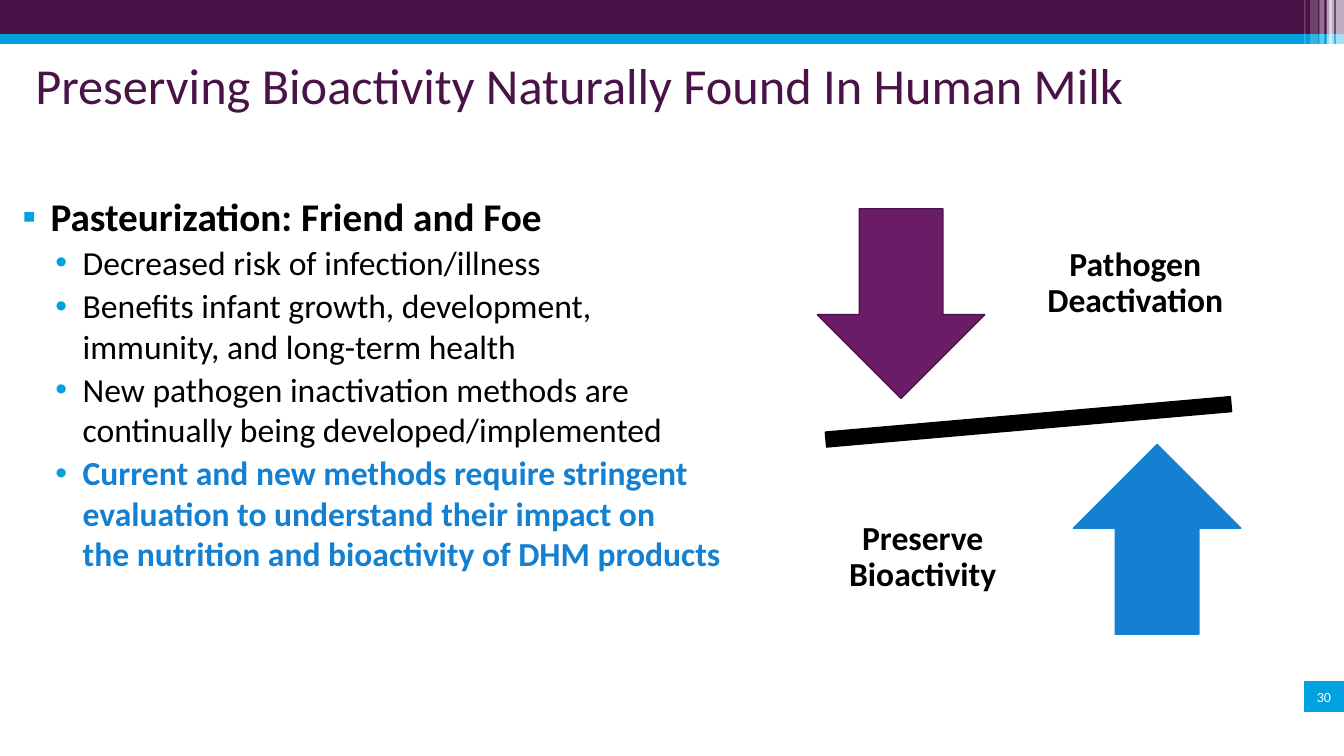
from lxml import etree
from pptx import Presentation
from pptx.dml.color import RGBColor
from pptx.enum.shapes import MSO_SHAPE
from pptx.enum.text import MSO_ANCHOR, MSO_AUTO_SIZE, PP_ALIGN
from pptx.oxml.ns import qn
from pptx.util import Cm, Pt

RECTANGLE, MINUS = MSO_SHAPE.RECTANGLE, MSO_SHAPE.MATH_MINUS
DOWN_ARROW, UP_ARROW = MSO_SHAPE.DOWN_ARROW, MSO_SHAPE.UP_ARROW
TOP, MIDDLE = MSO_ANCHOR.TOP, MSO_ANCHOR.MIDDLE
LEFT, CENTER, RIGHT = PP_ALIGN.LEFT, PP_ALIGN.CENTER, PP_ALIGN.RIGHT
NO_AUTOFIT = MSO_AUTO_SIZE.NONE

PLUM = RGBColor(0x49, 0x13, 0x47)
PURPLE = RGBColor(0x6A, 0x1C, 0x67)
CYAN = RGBColor(0x00, 0xA1, 0xDF)
BLUE = RGBColor(0x14, 0x80, 0xD1)
BLACK = RGBColor(0x00, 0x00, 0x00)
WHITE = RGBColor(0xFF, 0xFF, 0xFF)
FONT = "Calibri"

presentation = Presentation()
presentation.slide_width, presentation.slide_height = Cm(33.87), Cm(19.05)
slide = presentation.slides.add_slide(presentation.slide_layouts[1])


def add_filled_shape(kind, left, top, width, height, fill, line=None):
    shape = slide.shapes.add_shape(kind, Cm(left), Cm(top), Cm(width), Cm(height))
    shape.shadow.inherit = False
    shape.fill.solid()
    shape.fill.fore_color.rgb = fill
    if line is None:
        shape.line.fill.background()
    else:
        shape.line.color.rgb = line
        shape.line.width = Pt(1)
    return shape


def add_styled_run(paragraph, text, size, color, bold=False):
    run = paragraph.add_run()
    run.text = text
    run.font.name = FONT
    run.font.size = Pt(size)
    run.font.bold = bold
    run.font.color.rgb = color


# Header bands
add_filled_shape(RECTANGLE, 0, 0, 33.87, 0.86, PLUM)
add_filled_shape(RECTANGLE, 0, 0.86, 33.87, 0.25, CYAN)

# Translucent stripes at the right end: left, width, opacity in percent
stripes = [
    (33.66, 0.21, 65),
    (33.5, 0.13, 65),
    (33.43, 0.13, 60),
    (33.25, 0.13, 40),
    (33.02, 0.2, 20),
    (32.87, 0.03, 30),
]
for left, width, opacity in stripes:
    stripe = add_filled_shape(RECTANGLE, left, 0, width, 1.11, WHITE)
    color = stripe.fill._xPr.find(qn("a:solidFill"))[0]
    etree.SubElement(color, qn("a:alpha"), val=str(opacity * 1000))

# Title
title = slide.shapes.title
title.left, title.top, title.width, title.height = Cm(0.89), Cm(1.12), Cm(32.05), Cm(2.97)
frame = title.text_frame
frame.auto_size = NO_AUTOFIT
frame.vertical_anchor = TOP
frame.margin_left = frame.margin_right = frame.margin_bottom = 0
frame.margin_top = Cm(0.25)
frame.paragraphs[0].alignment = LEFT
add_styled_run(frame.paragraphs[0], "Preserving Bioactivity Naturally Found In Human Milk", 36, PLUM)

# Bulleted list: level, colour, bold, lines
bullets = [
    (0, BLACK, True, ["Pasteurization: Friend and Foe"]),
    (1, BLACK, False, ["Decreased risk of infection/illness"]),
    (1, BLACK, False, ["Benefits infant growth, development,", "immunity, and long-term health"]),
    (1, BLACK, False, ["New pathogen inactivation methods are continually being developed/implemented"]),
    (1, BLUE, True, ["Current and new methods require stringent evaluation to understand their impact on",
                     "the nutrition and bioactivity of DHM products"]),
]
# For each level: bullet, text size, left margin, hanging indent
level_styles = [("▪", 28, 1.02, 0.71), ("•", 24, 1.83, 0.69)]

body = slide.placeholders[1]
body.left, body.top, body.width, body.height = Cm(0), Cm(4.72), Cm(19.56), Cm(11.94)
frame = body.text_frame
frame.auto_size = NO_AUTOFIT
frame.vertical_anchor = TOP
for index, (level, color, bold, lines) in enumerate(bullets):
    character, size, margin, hanging = level_styles[level]
    paragraph = frame.paragraphs[0] if index == 0 else frame.add_paragraph()
    paragraph.level = level
    properties = paragraph._p.get_or_add_pPr()
    properties.set("marL", str(Cm(margin)))
    properties.set("indent", str(-Cm(hanging)))
    bullet_color = etree.SubElement(properties, qn("a:buClr"))
    etree.SubElement(bullet_color, qn("a:srgbClr"), val=str(CYAN))
    etree.SubElement(properties, qn("a:buFont"), typeface="Arial")
    etree.SubElement(properties, qn("a:buChar"), char=character)
    paragraph.space_before = Pt(2 if index else 0)
    for line_index, line in enumerate(lines):
        if line_index:
            paragraph.add_line_break()
        add_styled_run(paragraph, line, size, color, bold)

# Balance beam and arrows
beam = add_filled_shape(MINUS, 18.95, 9.83, 13.94, 1.6, BLACK, BLACK)
beam.rotation = 355
add_filled_shape(DOWN_ARROW, 20.6, 5.26, 4.22, 4.78, PURPLE, PLUM)
add_filled_shape(UP_ARROW, 27.05, 11.2, 4.22, 4.78, BLUE, BLUE)

# Slide number tile
add_filled_shape(RECTANGLE, 32.89, 17.17, 0.99, 0.76, CYAN, CYAN)

# Arrow labels and slide number: text, box, margin, alignment, spacing, size, colour, bold
labels = [
    ("Pathogen Deactivation", (25.65, 4.65, 5.92, 5), 0.48, CENTER, 0.9, 24, BLACK, True),
    ("Preserve Bioactivity", (19.99, 11.56, 6.53, 5), 0.48, CENTER, 0.9, 24, BLACK, True),
    ("30", (32.72, 17.17, 1.07, 0.76), 0.25, RIGHT, 1.0, 10, WHITE, False),
]
for text, box, margin, alignment, spacing, size, color, bold in labels:
    label = slide.shapes.add_textbox(*[Cm(length) for length in box])
    frame = label.text_frame
    frame.word_wrap = True
    frame.vertical_anchor = MIDDLE
    frame.margin_left = frame.margin_right = Cm(margin)
    paragraph = frame.paragraphs[0]
    paragraph.alignment = alignment
    paragraph.line_spacing = spacing
    add_styled_run(paragraph, text, size, color, bold)

presentation.save("out.pptx")
